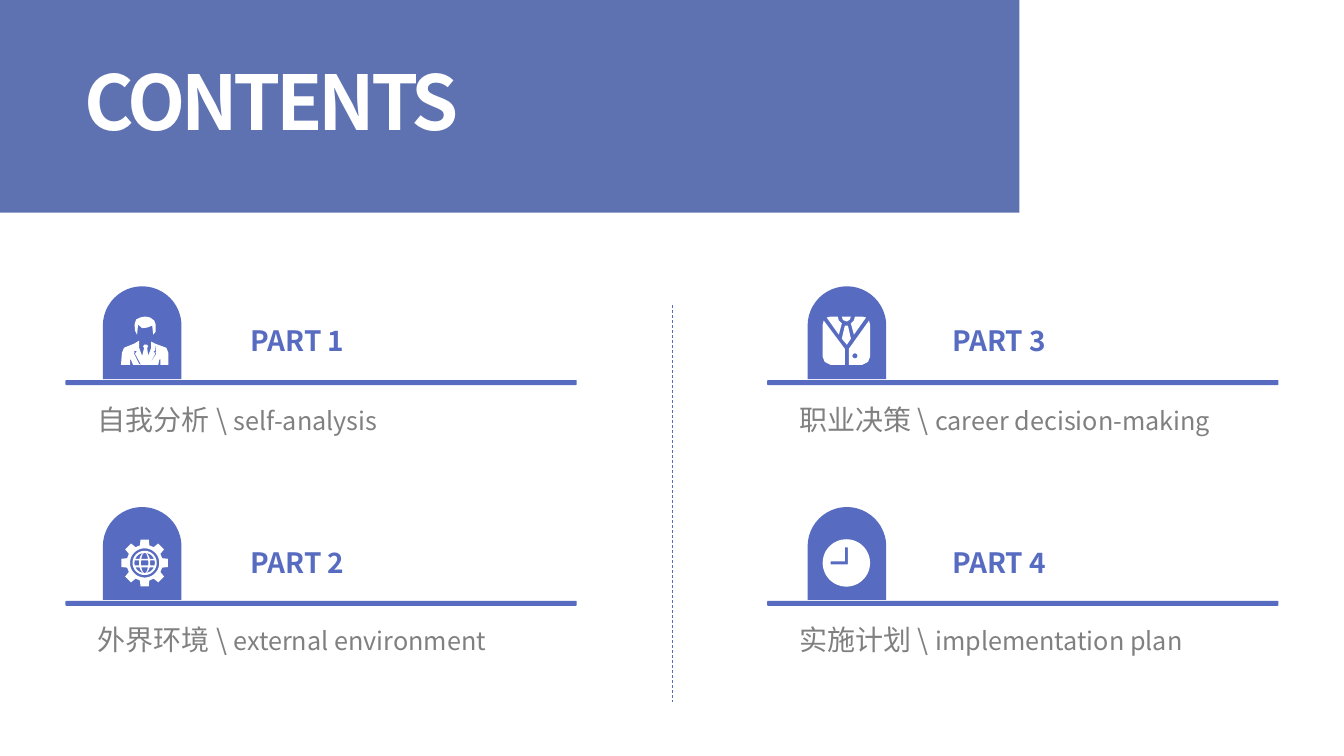
from math import cos, radians, sin, sqrt

from lxml import etree
from pptx import Presentation
from pptx.dml.color import RGBColor
from pptx.enum.dml import MSO_LINE_DASH_STYLE as DASH
from pptx.enum.shapes import MSO_CONNECTOR, MSO_SHAPE as SHAPE
from pptx.enum.text import PP_ALIGN
from pptx.oxml.ns import qn
from pptx.util import Inches, Pt

FONT = "Noto Sans CJK SC"
BLUE, BANNER, GREY, WHITE = "576CC1", "5E72B1", "808080", "FFFFFF"


def paint(sp, color):
    sp.shadow.inherit = False
    sp.fill.solid()
    sp.fill.fore_color.rgb = RGBColor.from_string(color)
    sp.line.fill.background()


def add_text(x, y, w, h, runs, color, bold=False):
    """Add a one-paragraph text box; runs are (text, size) pairs."""
    tf = s.shapes.add_textbox(Inches(x), Inches(y), Inches(w), Inches(h)).text_frame
    tf.word_wrap = True
    for text, size in runs:
        r = tf.paragraphs[0].add_run()
        r.text = text
        r.font.size, r.font.bold, r.font.name = Pt(size), bold, FONT
        r.font.color.rgb = RGBColor.from_string(color)
        etree.SubElement(r.font._element, qn("a:ea")).set("typeface", FONT)
    return tf


prs = Presentation()
prs.slide_width, prs.slide_height = Inches(13.33), Inches(7.5)
s = prs.slides.add_slide(prs.slide_layouts[6])

# Banner and title
banner = s.shapes.add_shape(SHAPE.RECTANGLE, 0, 0, Inches(10.11), Inches(2.11))
paint(banner, BANNER)
tf = add_text(0.84, 0.54, 6.01, 0.91, [("CONTENTS", 54)], WHITE, bold=True)
tf.margin_left = tf.margin_right = tf.margin_top = tf.margin_bottom = 0
tf.paragraphs[0].runs[0].font._element.set("spc", "-300")

# Icon outlines, in hundredths of an inch from the icon's corner; inner outlines are holes
MID = 23.5
unit_circle = [(cos(radians(a)), sin(radians(a))) for a in range(0, 360, 6)]

person = [
    [(16, 18), (17, 8), (21, 11.5), (26, 11), (31, 9), (32, 18), (34.5, 15), (34.5, 8),
     (33, 4), (29, 1), (24, 0), (19, 1), (15, 3), (13.5, 8), (14, 14)],
    [(3, 31), (13, 27), (13, 35), (14, 35), (13, 36), (13, 37), (18, 47), (20, 48),
     (14, 37), (16, 34), (13, 34), (13, 27), (18, 24), (18, 31), (21, 39), (23, 31),
     (22, 30), (23, 28), (26, 28), (27, 30), (26, 31), (27, 39), (30, 31), (30, 25),
     (34, 27), (34, 34), (32, 34), (34, 37), (29, 46), (28, 48), (35, 37), (35, 36),
     (33, 35), (35, 35), (34, 27), (45, 31), (47, 36), (47, 48), (39, 48), (39, 42),
     (38, 43), (37, 48), (12, 48), (10, 43), (9, 42), (9, 48), (0, 48), (1, 36)],
]

teeth = [(tooth + a, radius) for tooth in range(0, 360, 45)
         for a, radius in ((-15, 18), (-10, 23.5), (10, 23.5), (15, 18))]
gear = [[(MID + r * cos(radians(a)), MID + r * sin(radians(a))) for a, r in teeth]]
for radius in (14.5, 12):
    gear.append([(MID + radius * x, MID + radius * y) for x, y in unit_circle])
for top, bottom in ((-10, -4), (-2.5, 2.5), (4.5, 10)):
    ys = [top + (bottom - top) * i / 6 for i in range(7)]
    for left, right in ((-1, -0.55), (-0.36, 0.36), (0.55, 1)):
        edges = [(left, y) for y in ys] + [(right, y) for y in reversed(ys)]
        gear.append([(MID + k * sqrt(102 - y * y), MID + y) for k, y in edges])

suit = [
    [(32 + 2.5 * x, 39 + 2.5 * y) for x, y in unit_circle],
    [(22, 9), (25, 9), (28, 22), (24, 28), (19, 22)],
    [(46, 4), (47, 8), (47, 40), (45, 45), (39, 48), (26, 48), (26, 32)],
    [(1, 4), (22, 32), (22, 48), (8, 48), (2, 45), (0, 40), (0, 8)],
    [(19, 0), (28, 0), (27, 3), (24, 5), (20, 3.5)],
    [(32, 0), (39, 0), (43, 1), (31, 18), (28, 7), (31, 4)],
    [(8, 0), (15, 0), (16, 4), (19, 7), (16, 18), (4, 1)],
]

clock = [
    [(MID + MID * x, MID + MID * y) for x, y in unit_circle],
    [(25, 25), (8, 25), (8, 22), (22, 22), (22, 8), (25, 8)],
]

# Four parts, down the left column and then the right
parts = [
    ("自我分析 \\ ", "self-analysis", 3.4, person),
    ("外界环境 \\ ", "external environment", 4.05, gear),
    ("职业决策 \\ ", "career decision-making", 4.49, suit),
    ("实施计划 \\ ", "implementation plan", 4.3, clock),
]
for i, (chinese, english, width, icon) in enumerate(parts):
    col, row = divmod(i, 2)
    dx, dy = 6.96 * col, 2.19 * row

    arch = s.shapes.add_shape(SHAPE.ROUND_2_SAME_RECTANGLE, Inches(1.02 + 6.99 * col),
                              Inches(2.84 + dy), Inches(0.78), Inches(0.92))
    arch.adjustments[0] = 0.5
    paint(arch, BLUE)
    bar = s.shapes.add_shape(SHAPE.ROUNDED_RECTANGLE, Inches(0.65 + dx),
                             Inches(3.77 + dy), Inches(5.07), Inches(0.05))
    paint(bar, BLUE)

    outlines = [[(Inches(x / 100), Inches(y / 100)) for x, y in pts] for pts in icon]
    builder = s.shapes.build_freeform(*outlines[0][0])
    for n, pts in enumerate(outlines):
        if n:
            builder.move_to(*pts[0])
        builder.add_line_segments(pts[1:], close=True)
    paint(builder.convert_to_shape(Inches(1.2 + dx), Inches(3.14 + 2.21 * row)), WHITE)

    tf = add_text(2.23 + dx, 3.16 + 2.2 * row, 1.44, 0.44, [(f"PART {i + 1}", 20)],
                  BLUE, bold=True)
    tf.paragraphs[0].alignment = PP_ALIGN.CENTER
    add_text(0.87 + dx, 3.94 + dy, width, 0.44, [(chinese, 20), (english, 18)], GREY)

# Divider between the columns
divider = s.shapes.add_connector(MSO_CONNECTOR.STRAIGHT, Inches(6.67), Inches(3.03),
                                 Inches(6.67), Inches(6.96))
divider.line.color.rgb = RGBColor.from_string(BLUE)
divider.line.width = Pt(0.5)
divider.line.dash_style = DASH.DASH
etree.SubElement(divider._element.spPr, qn("a:effectLst"))

prs.save("out.pptx")
